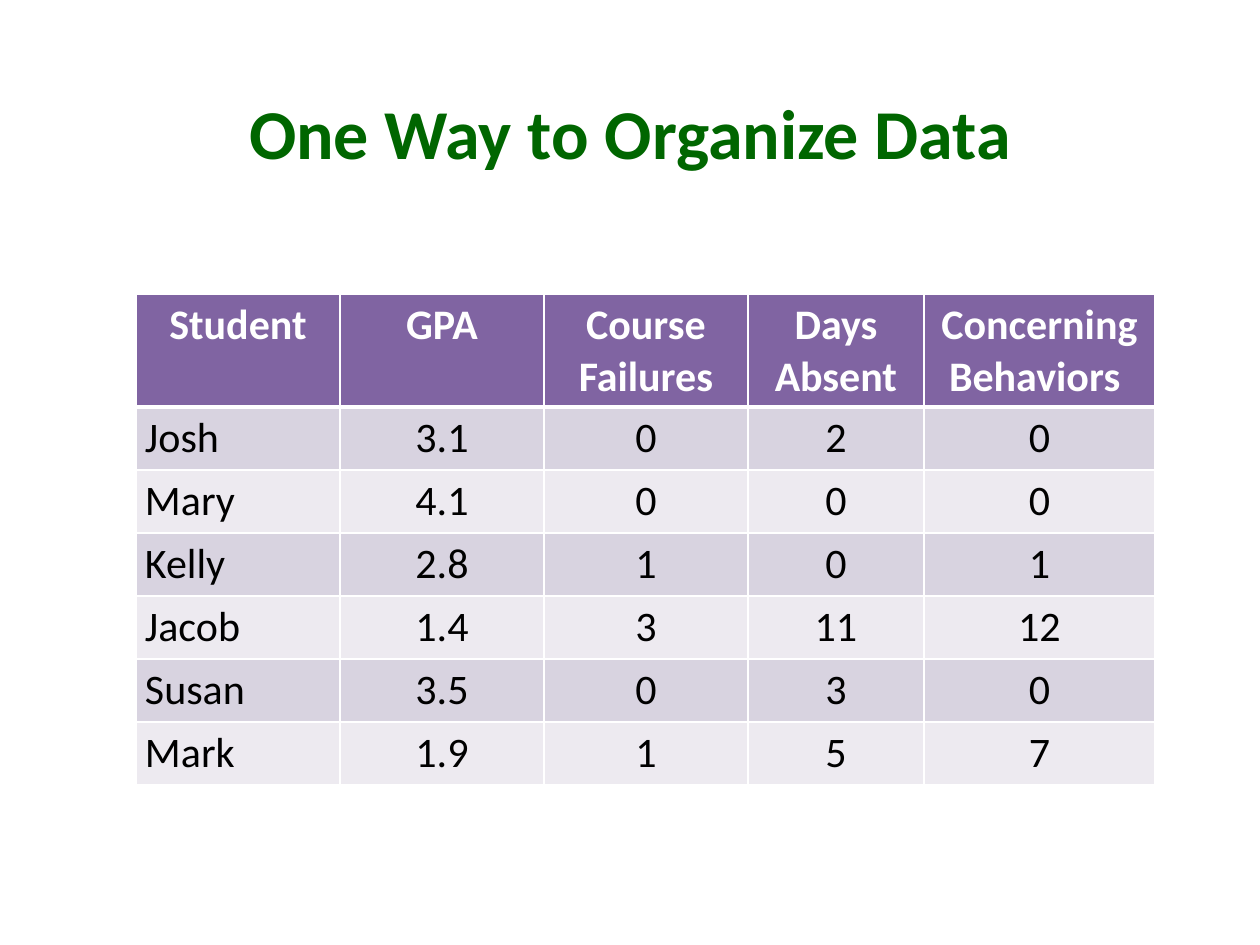
from dataclasses import dataclass

import pptx
import pptx.dml.color
import pptx.enum.text
import pptx.oxml
import pptx.oxml.ns
import pptx.slide
import pptx.table
import pptx.text.text
import pptx.util

PIXELS_PER_INCH = 126
ALIGN = pptx.enum.text.PP_ALIGN


@dataclass(frozen=True)
class Theme:
    font: str = "Calibri"
    title_size: int = 40
    table_size: int = 24
    title: str = "006600"
    header_fill: str = "8064A2"
    header_text: str = "FFFFFF"
    body_text: str = "000000"
    band_fills: tuple[str, str] = ("D8D3E0", "EDEAF0")
    border: str = "FFFFFF"
    thin_border: int = 1
    header_border: int = 3


@dataclass(frozen=True)
class Column:
    heading: str
    width: int
    align: ALIGN = ALIGN.CENTER


@dataclass(frozen=True)
class Student:
    name: str
    gpa: str
    failures: int
    absences: int
    behaviors: int

    def values(self) -> tuple[str, ...]:
        numbers = (self.failures, self.absences, self.behaviors)
        return self.name, self.gpa, *map(str, numbers)


THEME = Theme()
COLUMNS = (
    Column("Student", 204, ALIGN.LEFT),
    Column("GPA", 204),
    Column("Course Failures", 204),
    Column("Days Absent", 176),
    Column("Concerning\nBehaviors ", 231),
)
STUDENTS = (
    Student("Josh", "3.1", 0, 2, 0),
    Student("Mary", "4.1", 0, 0, 0),
    Student("Kelly", "2.8", 1, 0, 1),
    Student("Jacob", "1.4", 3, 11, 12),
    Student("Susan", "3.5", 0, 3, 0),
    Student("Mark", "1.9", 1, 5, 7),
)
TABLE_LEFT, TABLE_TOP = 136, 294
HEADER_HEIGHT, ROW_HEIGHT = 113, 63
CELL_INSET_X, CELL_INSET_Y = 9, 6


def px(length: int) -> pptx.util.Emu:
    return pptx.util.Emu(round(length * 914400 / PIXELS_PER_INCH))


def style_text(frame: pptx.text.text.TextFrame, size: int, color: str,
               bold: bool, align: ALIGN) -> None:
    for paragraph in frame.paragraphs:
        paragraph.alignment = align
        paragraph.font.name = THEME.font
        paragraph.font.size = pptx.util.Pt(size)
        paragraph.font.bold = bold
        paragraph.font.color.rgb = pptx.dml.color.RGBColor.from_string(color)


def add_title(slide: pptx.slide.Slide, text: str) -> None:
    box = slide.shapes.add_textbox(px(63), px(53), px(1134), px(158))
    frame = box.text_frame
    frame.word_wrap = True
    frame.vertical_anchor = pptx.enum.text.MSO_ANCHOR.MIDDLE
    frame.text = text
    style_text(frame, THEME.title_size, THEME.title, True, ALIGN.CENTER)


def add_borders(cell: pptx.table._Cell, top: int, bottom: int) -> None:
    """Add the four cell borders, with widths in points; call before filling."""
    thin = THEME.thin_border
    properties = cell._tc.get_or_add_tcPr()
    for side, width in (("L", thin), ("R", thin), ("T", top), ("B", bottom)):
        properties.append(pptx.oxml.parse_xml(
            f'<a:ln{side} {pptx.oxml.ns.nsdecls("a")} w="{pptx.util.Pt(width)}">'
            f'<a:solidFill><a:srgbClr val="{THEME.border}"/></a:solidFill>'
            f'</a:ln{side}>'))


def fill_cell(cell: pptx.table._Cell, text: str, row: int, align: ALIGN) -> None:
    is_header = row == 0
    cell.margin_left = cell.margin_right = px(CELL_INSET_X)
    cell.margin_top = cell.margin_bottom = px(CELL_INSET_Y)
    add_borders(
        cell,
        top=THEME.header_border if row == 1 else THEME.thin_border,
        bottom=THEME.header_border if is_header else THEME.thin_border)
    fill = THEME.header_fill if is_header else THEME.band_fills[(row - 1) % 2]
    cell.fill.solid()
    cell.fill.fore_color.rgb = pptx.dml.color.RGBColor.from_string(fill)
    cell.text = text
    color = THEME.header_text if is_header else THEME.body_text
    style_text(cell.text_frame, THEME.table_size, color, is_header,
               ALIGN.CENTER if is_header else align)


def add_student_table(slide: pptx.slide.Slide) -> None:
    rows = [tuple(column.heading for column in COLUMNS)]
    rows += [student.values() for student in STUDENTS]
    heights = [HEADER_HEIGHT] + [ROW_HEIGHT] * len(STUDENTS)
    table = slide.shapes.add_table(
        len(rows), len(COLUMNS), px(TABLE_LEFT), px(TABLE_TOP),
        px(sum(column.width for column in COLUMNS)), px(sum(heights))).table
    for index, column in enumerate(COLUMNS):
        table.columns[index].width = px(column.width)
    for row, (values, height) in enumerate(zip(rows, heights)):
        table.rows[row].height = px(height)
        for index, (text, column) in enumerate(zip(values, COLUMNS)):
            fill_cell(table.cell(row, index), text, row, column.align)


def main() -> None:
    presentation = pptx.Presentation()
    presentation.slide_width, presentation.slide_height = px(1260), px(945)
    slide = presentation.slides.add_slide(presentation.slide_layouts[6])
    add_title(slide, "One Way to Organize Data")
    add_student_table(slide)
    presentation.save("out.pptx")


if __name__ == "__main__":
    main()
